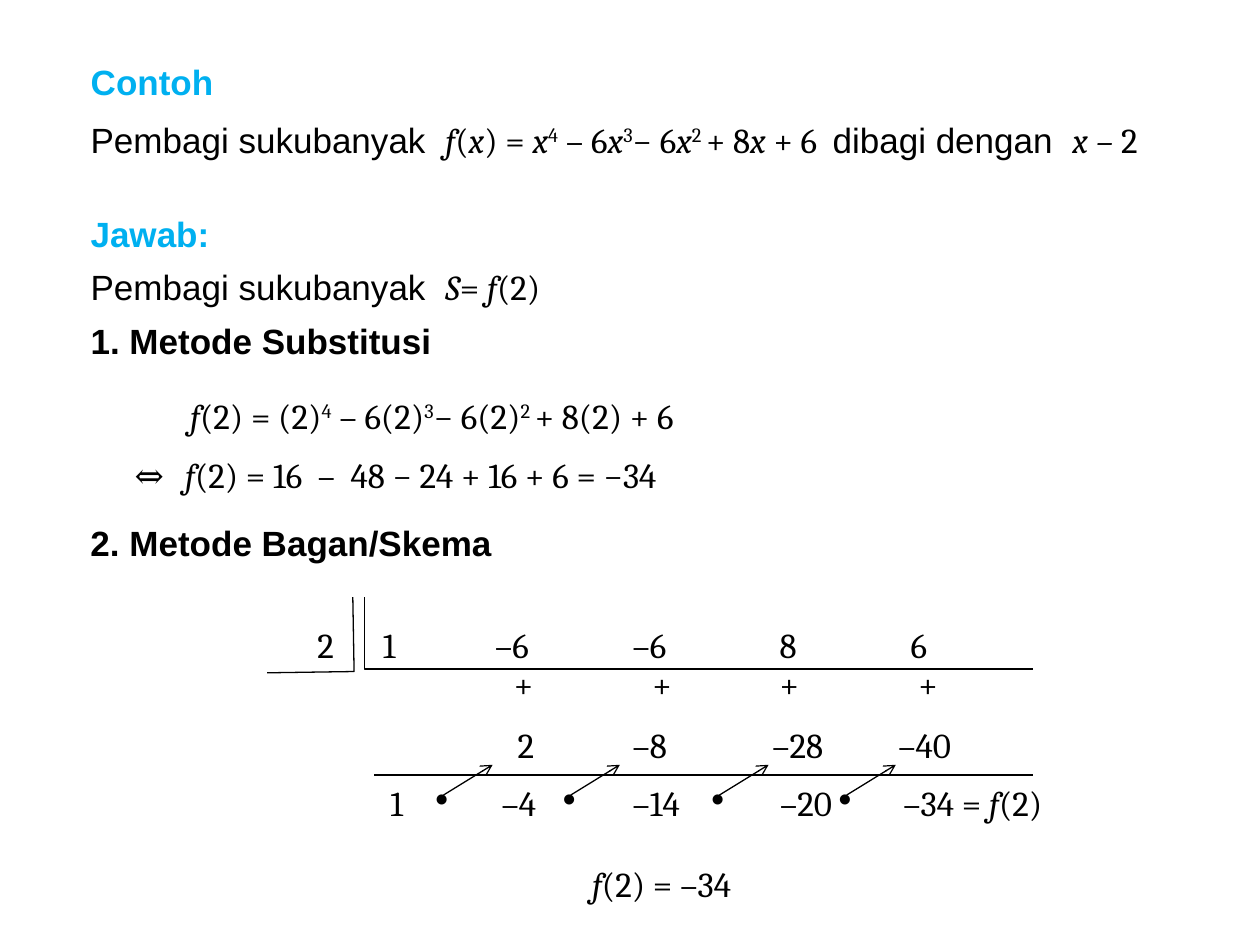
from lxml import etree
from pptx import Presentation
from pptx import util as u
from pptx.dml.color import RGBColor
from pptx.enum import shapes, text as t
from pptx.oxml import ns

HEADING, MATH = "Arial", "Cambria"
BLACK, BLUE = "000000", "00B0F0"
LINE_HEIGHT = 0.44


def color(value):
    return RGBColor.from_string(value)


def write(para, text, font=MATH, size=20, fill=BLACK, bold=False):
    """Fill a paragraph; _ toggles italics, ^ superscript, | the typeface."""
    italic = raised = False
    pending = ""

    def flush():
        if not pending:
            return
        span = para.add_run()
        span.text = pending
        span.font.name, span.font.size = font, u.Pt(size)
        span.font.bold, span.font.italic = bold, italic
        span.font.color.rgb = color(fill)
        if raised:
            span._r.get_or_add_rPr().set("baseline", "30000")

    for letter in text:
        if letter not in "_^|":
            pending += letter
            continue
        flush()
        pending = ""
        if letter == "_":
            italic = not italic
        elif letter == "^":
            raised = not raised
        else:
            font = MATH if font == HEADING else HEADING
    flush()


class Page:
    """The current slide with its line style."""

    line_color, line_width = BLACK, 0.75

    def __init__(self, deck):
        self.slide = deck.slides.add_slide(deck.slide_layouts[5])

    def title(self, text, left, top, width):
        box = self.slide.shapes.title
        box.left, box.top = u.Inches(left), u.Inches(top)
        box.width, box.height = u.Inches(width), u.Inches(LINE_HEIGHT)
        frame = box.text_frame
        frame.auto_size = t.MSO_AUTO_SIZE.NONE
        frame.vertical_anchor = t.MSO_ANCHOR.TOP
        frame.paragraphs[0].alignment = t.PP_ALIGN.LEFT
        write(frame.paragraphs[0], text, HEADING, fill=BLUE, bold=True)

    def text(self, text, left, top, width, wrap=False, tab=None, **style):
        box = self.slide.shapes.add_textbox(
            u.Inches(left), u.Inches(top), u.Inches(width), u.Inches(LINE_HEIGHT))
        frame = box.text_frame
        frame.word_wrap = wrap
        frame.auto_size = t.MSO_AUTO_SIZE.SHAPE_TO_FIT_TEXT
        para = frame.paragraphs[0]
        if tab:
            stops = etree.SubElement(para._p.get_or_add_pPr(), ns.qn("a:tabLst"))
            etree.SubElement(stops, ns.qn("a:tab"), pos=str(u.Inches(tab)), algn="l")
        write(para, text, **style)

    def stroke(self, shape):
        shape.line.color.rgb = color(self.line_color)
        shape.line.width = u.Pt(self.line_width)

    def outline(self, *points):
        corners = [(u.Inches(x), u.Inches(y)) for x, y in points]
        builder = self.slide.shapes.build_freeform(*corners[0])
        builder.add_line_segments(corners[1:], close=False)
        shape = builder.convert_to_shape()
        shape.fill.background()
        shape.shadow.inherit = False
        self.stroke(shape)

    def line(self, start, end, arrow=False):
        line = self.slide.shapes.add_connector(
            shapes.MSO_CONNECTOR.STRAIGHT, *map(u.Inches, start + end))
        self.stroke(line)
        if arrow:
            etree.SubElement(line.line._get_or_add_ln(), ns.qn("a:tailEnd"), type="arrow")
        etree.SubElement(line._element.spPr, ns.qn("a:effectLst"))


def main():
    deck = Presentation()
    deck.slide_width, deck.slide_height = u.Inches(10), u.Inches(7.5)
    page = Page(deck)
    margin = 0.62

    # Problem, answer and method headings
    page.title("Contoh", margin, 0.43, 1.25)
    page.text("Pembagi sukubanyak  |_f_(_x_) = _x_^4^ – 6_x_^3^− 6_x_^2 ^+ 8_x_ + 6  "
              "|dibagi dengan  |_x – _2", margin, 0.89, 9.18, wrap=True, font=HEADING)
    page.text("Jawab:", margin, 1.64, 1.25, wrap=True, font=HEADING, fill=BLUE, bold=True)
    page.text("Pembagi sukubanyak  |_S_= _f_(2)", margin, 2.06, 3.98, wrap=True, font=HEADING)
    for heading, top, width in [("1. Metode Substitusi", 2.49, 3.05),
                                ("2. Metode Bagan/Skema", 4.09, 3.67)]:
        page.text(heading, margin, top, width, wrap=True, font=HEADING, bold=True)

    # Substitution
    page.text("_f_(2) = (2)^4^ – 6(2)^3^− 6(2)^2 ^+ 8(2) + 6", 1.41, 3.08, 4.22)
    page.text("⇔\t_f_(2) = 16  –  48 − 24 + 16 + 6 = −34", 0.97, 3.55, 4.71, tab=0.4)

    # Lines of the division scheme
    page.outline((2.8, 4.74), (2.81, 5.33), (2.12, 5.34))
    page.outline((2.89, 4.74), (2.89, 5.31), (8.2, 5.31))
    page.line((2.97, 6.15), (8.2, 6.15))

    # Numbers of the scheme, row by row
    rows = {
        4.9: [("2", 2.42), ("1", 2.94), ("–6", 3.83), ("–6", 4.92), ("8", 6.09), ("6", 7.13)],
        5.21: [("+", 3.98), ("+", 5.08), ("+", 6.09), ("+", 7.19)],
        5.69: [("2", 4.01), ("–8", 4.92), ("–28", 6.03), ("–40", 7.03)],
        6.15: [("1", 3), ("–4", 3.88), ("–14", 4.92), ("–20", 6.09)],
    }
    for top, cells in rows.items():
        for number, left in cells:
            width = 0.36 if number == "+" else 0.2 + 0.14 * len(number)
            page.text(number, left, top, width)
    page.text("–34 = _f_(2)", 7.07, 6.15, 1.39)

    # Dots with arrows up to the next product
    for left in (3.36, 4.37, 5.55, 6.56):
        page.text("•", left, 6.11, 0.32, wrap=True, font=HEADING, bold=True)
        page.line((left + 0.16, 6.31), (left + 0.55, 6.07), arrow=True)

    # Result
    page.text("_f_(2) = –34", 4.6, 6.8, 1.39)
    deck.save("out.pptx")


if __name__ == "__main__":
    main()
